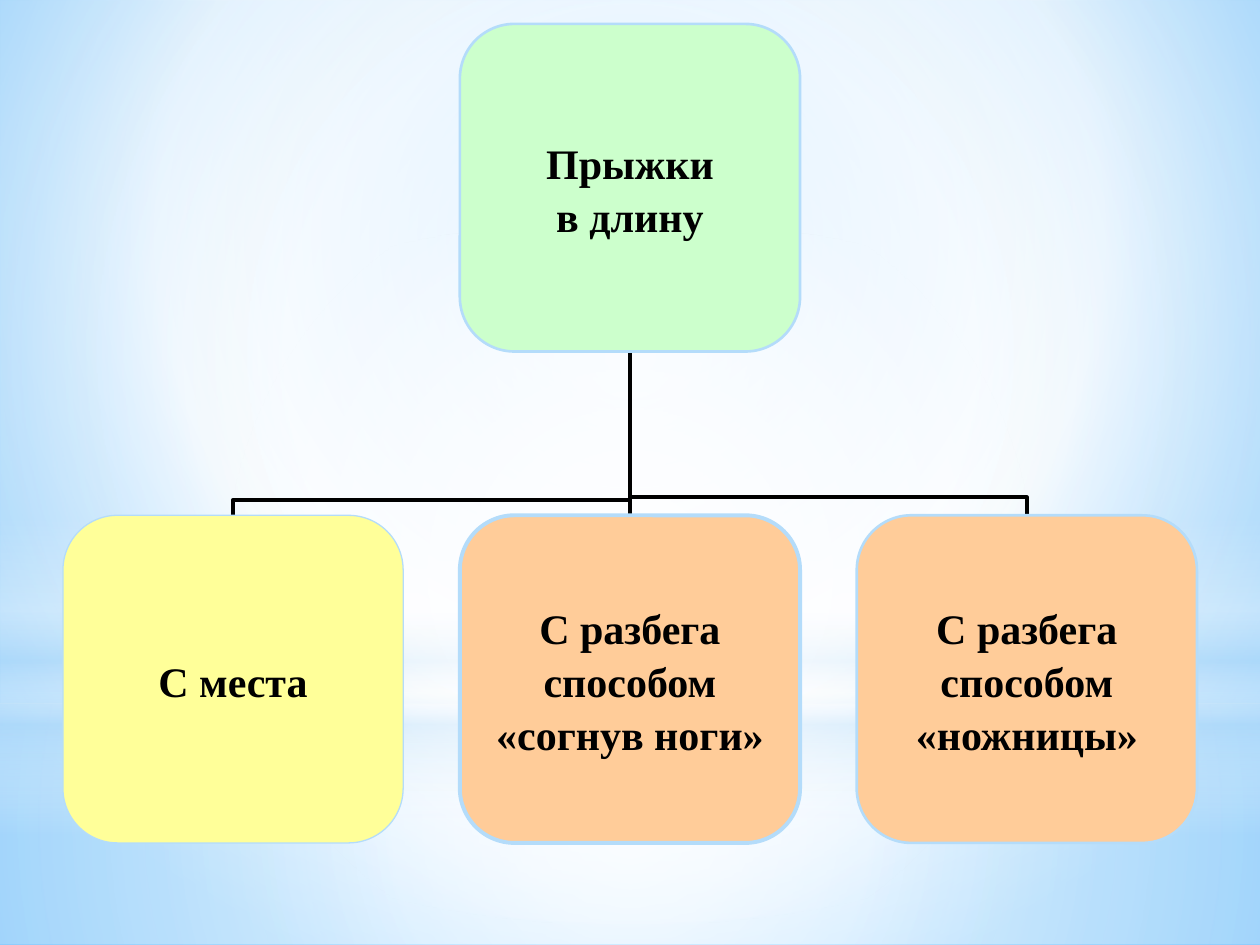
from lxml import etree
from pptx import Presentation
from pptx.dml.color import RGBColor
from pptx.enum.shapes import MSO_CONNECTOR, MSO_SHAPE
from pptx.enum.text import MSO_ANCHOR, PP_ALIGN
from pptx.oxml.ns import qn
from pptx.util import Pt

RECT, OVAL, ROUND = MSO_SHAPE.RECTANGLE, MSO_SHAPE.OVAL, MSO_SHAPE.ROUNDED_RECTANGLE
LINE, ELBOW = MSO_CONNECTOR.STRAIGHT, MSO_CONNECTOR.ELBOW
MIDDLE, CENTER = MSO_ANCHOR.MIDDLE, PP_ALIGN.CENTER

WIDE, HIGH = 720, 540
BOX_W, BOX_H = 194.4, 187.2
MID = WIDE / 2
STEP = 226.8
ROOT_Y, KID_Y = 13.7, 294.5
FOOT = ROOT_Y + BOX_H


def color(text):
    return RGBColor.from_string(text)


def sub(node, tag, **attrs):
    return etree.SubElement(node, qn(tag), attrs)


def blend(fill, stops, focus=None):
    fill.solid()
    grad = etree.Element(qn("a:gradFill"), rotWithShape="1")
    row = sub(grad, "a:gsLst")
    for place, tone, alpha in stops:
        stop = sub(row, "a:gs", pos=str(place * 1000))
        tint = sub(stop, "a:srgbClr", val=tone)
        if alpha < 100:
            sub(tint, "a:alpha", val=str(alpha * 1000))
    if focus:
        way = sub(grad, "a:path", path="circle")
        sides = {side: str(part * 1000) for side, part in zip("ltrb", focus)}
        sub(way, "a:fillToRect", **sides)
    else:
        sub(grad, "a:lin", ang="5400000", scaled="0")
    return grad


def swap(props, grad):
    props.replace(props.find(qn("a:solidFill")), grad)


class Deck:
    font = {"name": "Times New Roman", "size": Pt(24), "bold": True}
    frame = {"margin_left": 0, "margin_right": 0, "margin_top": 0,
             "margin_bottom": 0, "word_wrap": False, "vertical_anchor": MIDDLE}
    para = {"alignment": CENTER, "line_spacing": 1.05}
    ink, edge, wire = "000000", "B4DCFA", 2.25

    def __init__(self, slide):
        self.slide = slide

    def format(self, item, values):
        for name, value in values.items():
            setattr(item, name, value)

    def shape(self, kind, x, y, w, h):
        shape = self.slide.shapes.add_shape(kind, Pt(x), Pt(y), Pt(w), Pt(h))
        shape.shadow.inherit = False
        return shape

    def back(self, stops, focus):
        grad = blend(self.slide.background.fill, stops, focus)
        swap(self.slide.element.find(".//" + qn("p:bgPr")), grad)

    def glow(self, kind, y, h, stops, focus=None):
        shape = self.shape(kind, 0, y, WIDE, h)
        shape.line.fill.background()
        swap(shape.element.spPr, blend(shape.fill, stops, focus))

    def box(self, x, y, fill, width, lines):
        shape = self.shape(ROUND, x - BOX_W / 2, y, BOX_W, BOX_H)
        shape.fill.solid()
        shape.fill.fore_color.rgb = color(fill)
        shape.line.color.rgb = color(self.edge)
        shape.line.width = Pt(width)
        text = shape.text_frame
        self.format(text, self.frame)
        text.text = "\n".join(lines)
        for para in text.paragraphs:
            self.format(para, self.para)
            font = para.runs[0].font
            self.format(font, self.font)
            font.color.rgb = color(self.ink)
        return shape

    def link(self, kind, x1, y1, x2, y2):
        link = self.slide.shapes.add_connector(kind, Pt(x1), Pt(y1), Pt(x2), Pt(y2))
        link.line.color.rgb = color(self.ink)
        link.line.width = Pt(self.wire)
        sub(link.element.spPr, "a:effectLst")
        return link

    def elbow(self, x, bend):
        drop, span = KID_Y - FOOT, abs(x - MID)
        cx, cy = (x + MID) / 2, (KID_Y + FOOT) / 2
        right = x > MID
        half = drop / 2 if right else -drop / 2
        link = self.link(ELBOW, cx + half, cy - span / 2, cx - half, cy + span / 2)
        props = link.element.spPr
        props.find(qn("a:xfrm")).set("rot", "5400000" if right else "16200000")
        geom = props.find(qn("a:prstGeom"))
        guides = geom.find(qn("a:avLst"))
        if guides is None:
            guides = sub(geom, "a:avLst")
        sub(guides, "a:gd", name="adj1", fmla=f"val {bend * 1000}")


def main():
    show = Presentation()
    show.slide_width, show.slide_height = Pt(WIDE), Pt(HIGH)
    deck = Deck(show.slides.add_slide(show.slide_layouts[6]))
    white, blue = "FFFFFF", "B4DCFA"
    core = (50, 50, 50, 50)

    deck.back([(0, "9ED5FF", 100), (60, white, 100), (100, "5BB9FF", 100)],
              (20, 10, 20, 60))
    deck.glow(RECT, 402, 138, [(0, white, 91), (37, white, 76), (100, blue, 79)], core)
    deck.glow(RECT, 0, 402, [(0, white, 89), (48, white, 62), (100, blue, 79)], core)
    deck.glow(RECT, 296.6, 180, [(0, white, 0), (29, white, 30), (45, blue, 40),
                                 (55, white, 26), (65, blue, 60), (100, white, 0)])
    deck.glow(OVAL, 126, 402, [(0, white, 100), (56, white, 0)], core)

    deck.elbow(MID + STEP, 11)
    stem = deck.link(LINE, MID, KID_Y, MID, FOOT)
    deck.elbow(MID - STEP, 9.5)

    root = deck.box(MID, ROOT_Y, "CCFFCC", 1.5, ["Прыжки", "в длину"])
    kids = [
        ("FFFF99", 0.75, ["С места"]),
        ("FFCC99", 2.25, ["С разбега", "способом", "«согнув ноги»"]),
        ("FFCC99", 1.5, ["С разбега", "способом", "«ножницы»"]),
    ]
    boxes = [deck.box(MID + (i - 1) * STEP, KID_Y, *kid) for i, kid in enumerate(kids)]
    stem.begin_connect(boxes[1], 0)
    stem.end_connect(root, 2)
    show.save("out.pptx")


if __name__ == "__main__":
    main()
